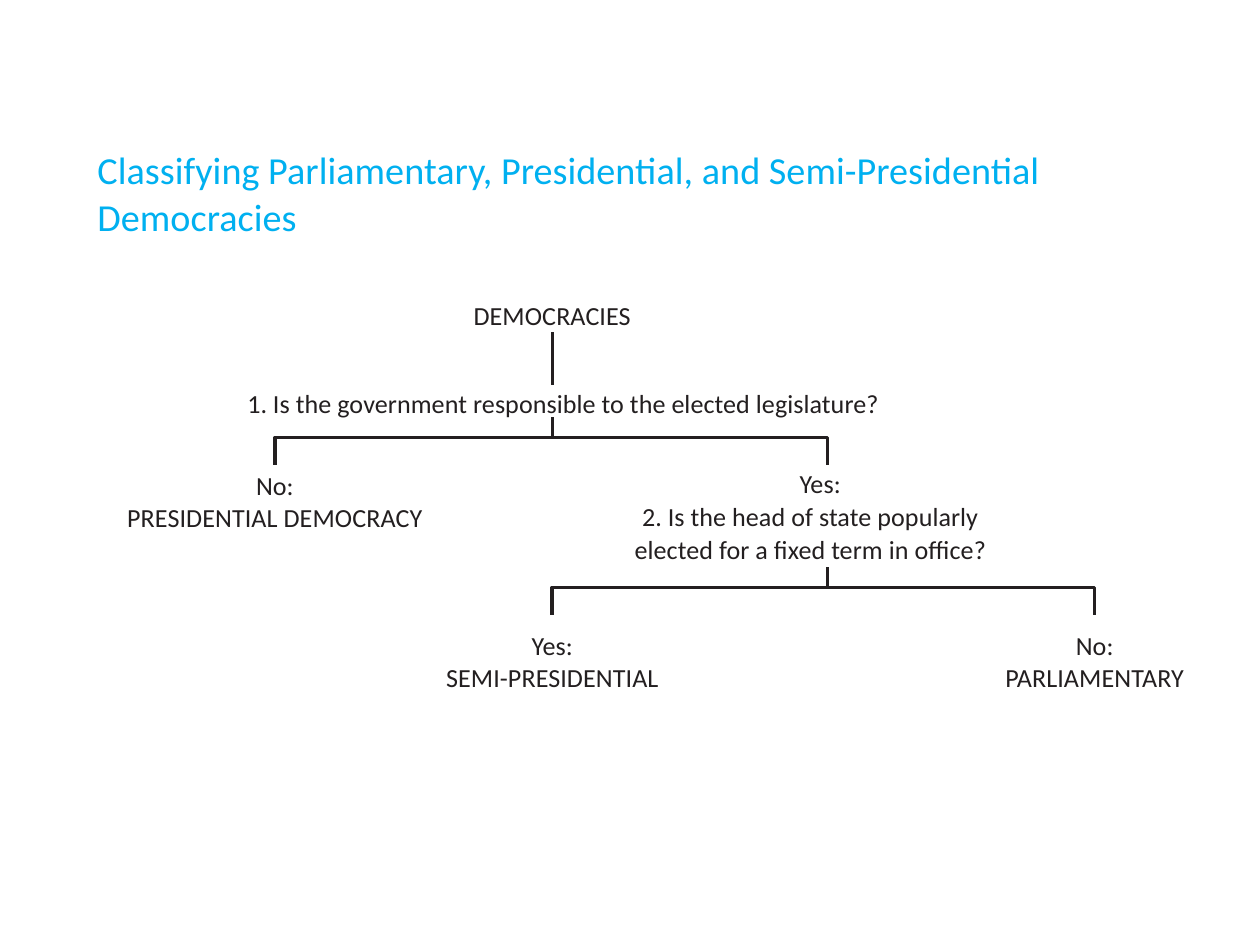
import pptx
import pptx.dml.color
import pptx.enum.shapes
import pptx.enum.text
import pptx.oxml
import pptx.util

Inches = pptx.util.Inches
Pt = pptx.util.Pt
ALIGN = pptx.enum.text.PP_ALIGN
COLORS = {"title": "00B0F0", "ink": "231F20"}
FONT = "Calibri"
LINE_WIDTH = 0.95
FORK_DROP = 0.11


def color(name):
    return pptx.dml.color.RGBColor.from_string(COLORS[name])


def add_text(page, area, lines, size=7.5, ink="ink", align=ALIGN.CENTER, top_inset=0.02):
    """Place one paragraph per line in area (left, top, width, height)."""
    box = page.shapes.add_textbox(*map(Inches, area))
    frame = box.text_frame
    frame.word_wrap = True
    frame.margin_left = frame.margin_right = frame.margin_bottom = 0
    frame.margin_top = Inches(top_inset)
    for number, line in enumerate(lines):
        para = frame.add_paragraph() if number else frame.paragraphs[0]
        para.alignment = align
        span = para.add_run()
        span.text = line
        span.font.name = FONT
        span.font.size = Pt(size)
        span.font.color.rgb = color(ink)
    return box


def indent(para, left, first=0):
    """Set the left margin and first-line indent in inches."""
    props = para._p.get_or_add_pPr()
    props.set("marL", str(Inches(left)))
    props.set("indent", str(Inches(first)))


def style_line(line):
    line.color.rgb = color("ink")
    line.width = Pt(LINE_WIDTH)


def add_stem(page, x, top, bottom, above, below=None):
    """Draw a vertical line joined to the boxes it touches."""
    stem = page.shapes.add_connector(
        pptx.enum.shapes.MSO_CONNECTOR.STRAIGHT,
        Inches(x), Inches(top), Inches(x), Inches(bottom))
    style_line(stem.line)
    props = stem._element.spPr
    props.append(pptx.oxml.parse_xml(
        '<a:effectLst xmlns:a="http://schemas.openxmlformats.org/drawingml/2006/main"/>'))
    stem.begin_connect(above, 2)
    if below is not None:
        stem.end_connect(below, 0)


def add_fork(page, left, top, right):
    """Draw a crossbar with a drop at each end."""
    low = top + FORK_DROP
    outline = page.shapes.build_freeform(Inches(left), Inches(low))
    corners = [(left, top), (right, top), (right, low)]
    outline.add_line_segments([(Inches(x), Inches(y)) for x, y in corners], close=False)
    fork = outline.convert_to_shape()
    fork.shadow.inherit = False
    fork.fill.background()
    style_line(fork.line)


def add_outcome(page, center, top, width, answer, outcome):
    add_text(page, (center - width / 2, top, width, 0.27), [answer, outcome])


def add_title(page, area):
    box = add_text(page, area,
                   ["Classifying Parliamentary, Presidential, and Semi-Presidential Democracies"],
                   size=11, ink="title", align=ALIGN.LEFT, top_inset=0.01)
    para = box.text_frame.paragraphs[0]
    indent(para, 0.01)
    para.line_spacing = 1.03


def add_first_question(page, left, top, width):
    """Root label and question 1, down to its fork."""
    middle = left + width / 2
    root = add_text(page, (left, top, width, 0.14), ["DEMOCRACIES"], top_inset=0.01)
    question = add_text(page, (left, top + 0.35, width, 0.13),
                        ["1. Is the government responsible to the elected legislature?"],
                        align=ALIGN.LEFT, top_inset=0.01)
    indent(question.text_frame.paragraphs[0], 0.18)
    add_stem(page, middle, top + 0.14, top + 0.35, root, question)
    add_stem(page, middle, top + 0.48, top + 0.56, question)
    add_fork(page, 1.1, top + 0.56, 3.31)


def add_second_question(page, left, top, width):
    """Question 2 under the yes branch, down to its fork."""
    question = add_text(page, (left, top, width, 0.42),
                        ["Yes:", "2. Is the head of state popularly elected for a fixed term in office?"],
                        align=ALIGN.LEFT)
    answer, wording = question.text_frame.paragraphs
    indent(answer, 0.67)
    indent(wording, 0.01, 0.03)
    wording.line_spacing = Pt(9.5)
    add_stem(page, left + width / 2, top + 0.42, top + 0.5, question)
    add_fork(page, 2.21, top + 0.5, 4.38)


def main():
    deck = pptx.Presentation()
    deck.slide_width, deck.slide_height = Pt(363), Pt(272.5)
    page = deck.slides.add_slide(deck.slide_layouts[6])
    add_title(page, (0.38, 0.57, 3.89, 0.38))
    add_first_question(page, 0.81, 1.19, 2.8)
    add_second_question(page, 2.53, 1.85, 1.56)
    add_outcome(page, 1.1, 1.86, 1.21, "No:", "PRESIDENTIAL DEMOCRACY")
    add_outcome(page, 2.21, 2.5, 1.08, "Yes:", "SEMI-PRESIDENTIAL")
    add_outcome(page, 4.38, 2.5, 1.08, "No:", "PARLIAMENTARY")
    deck.save("out.pptx")


if __name__ == "__main__":
    main()
